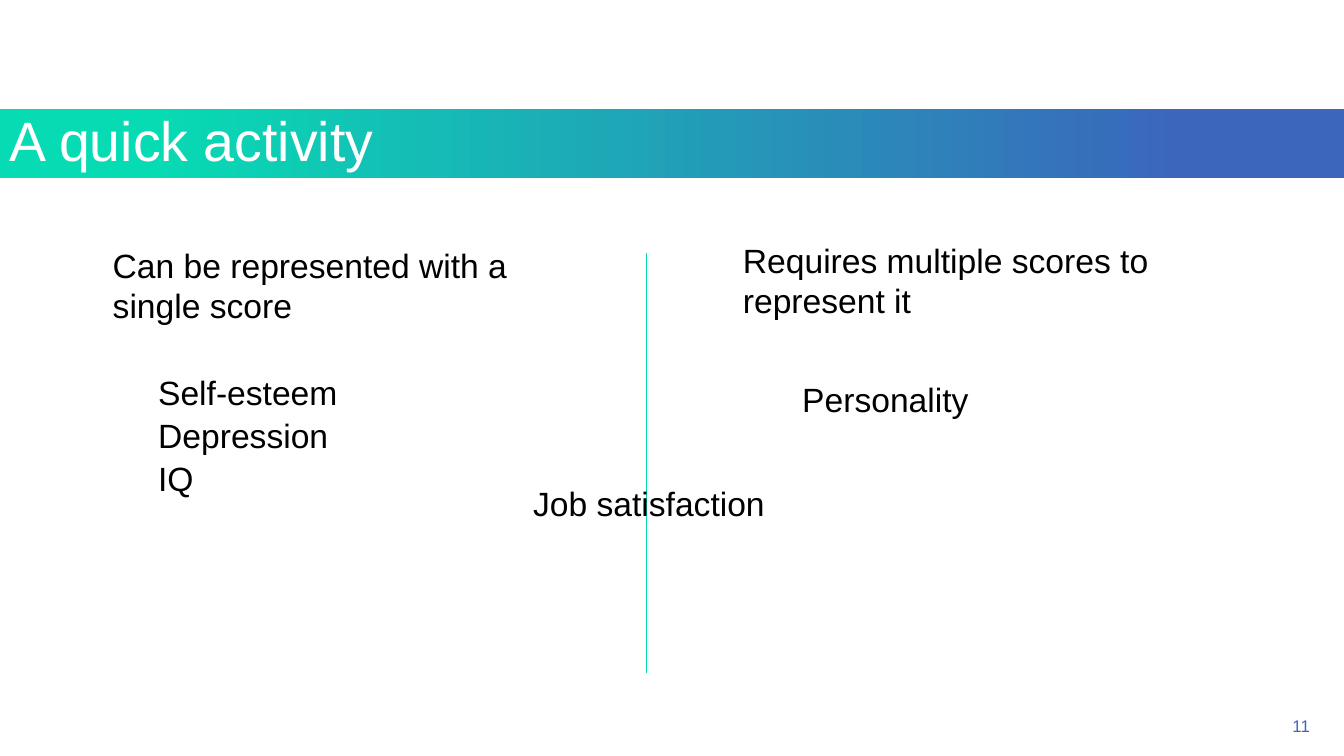
from lxml import etree
from pptx import Presentation
from pptx.dml.color import RGBColor
from pptx.enum.shapes import MSO_CONNECTOR, MSO_SHAPE
from pptx.enum.text import MSO_ANCHOR, PP_ALIGN
from pptx.oxml.ns import qn
from pptx.util import Inches, Pt

RECT = MSO_SHAPE.RECTANGLE
LINE = MSO_CONNECTOR.STRAIGHT
TOP, MID, LOW = MSO_ANCHOR.TOP, MSO_ANCHOR.MIDDLE, MSO_ANCHOR.BOTTOM
LEFT, RIGHT = PP_ALIGN.LEFT, PP_ALIGN.RIGHT

WIDE, HIGH = Inches(13.33), Inches(7.5)
BLUE, MINT, TEAL = "3B66BC", "07DBB3", "00DAB1"
BLACK, WHITE = "000000", "FFFFFF"


def color(code):
    return RGBColor.from_string(code)


def share(x, y):
    """Turn percentages of the slide's width and height into lengths."""
    return int(WIDE * x / 100), int(HIGH * y / 100)


def write(shape, lines, size=24, ink=BLACK, align=LEFT, anchor=TOP,
          indent=0, pitch=1.0, gap=0):
    frame = shape.text_frame
    frame.word_wrap = True
    frame.vertical_anchor = anchor
    for i, line in enumerate(lines):
        par = frame.paragraphs[0] if i == 0 else frame.add_paragraph()
        par.alignment = align
        par.line_spacing = pitch
        if i:
            par.space_before = Pt(gap)
        if indent:
            par.level = 1
            props = par._p.get_or_add_pPr()
            props.set("marL", str(Inches(indent)))
            props.set("indent", "0")
        run = par.add_run()
        run.text = line
        run.font.name = "Arial"
        run.font.size = Pt(size)
        run.font.color.rgb = color(ink)


def label(slide, x, y, w, h, *lines, **style):
    box = slide.shapes.add_textbox(*share(x, y), *share(w, h))
    write(box, lines, **style)


def banner(slide, y, h, title):
    bar = slide.shapes.add_shape(RECT, *share(0, y), *share(100, h))
    bar.shadow.inherit = False
    bar.line.fill.background()
    bar.fill.gradient()
    bar.fill.gradient_angle = 180
    # Solid ends with a blend between them
    stops = bar._element.spPr.find(qn("a:gradFill")).find(qn("a:gsLst"))
    for stop in list(stops):
        stops.remove(stop)
    for pos, code in ((0, BLUE), (12, BLUE), (89, MINT), (100, MINT)):
        stop = etree.SubElement(stops, qn("a:gs"), pos=str(pos * 1000))
        etree.SubElement(stop, qn("a:srgbClr"), val=code)
    write(bar, [title], size=39.6, ink=WHITE, anchor=MID, pitch=0.9)


def divide(slide, x, top, end):
    rule = slide.shapes.add_connector(LINE, *share(x, top), *share(x, end))
    rule.line.color.rgb = color(TEAL)
    rule.line.width = Pt(0.75)
    etree.SubElement(rule._element.spPr, qn("a:effectLst"))


def main():
    deck = Presentation()
    deck.slide_width, deck.slide_height = WIDE, HIGH
    slide = deck.slides.add_slide(deck.slide_layouts[6])
    item = {"indent": 0.5, "pitch": 0.9, "gap": 5}

    # Title band
    banner(slide, 14.4, 9.2, "A quick activity")

    # Left column items and slide number
    label(slide, 7.28, 49.1, 28.5, 34.4,
          "Self-esteem", "Depression", "IQ", **item)
    label(slide, 75.7, 94.67, 22.5, 3.33, "11",
          size=12, ink=BLUE, align=RIGHT, anchor=LOW)

    # Column headings
    label(slide, 7.65, 31.73, 37.8, 12.13,
          "Can be represented with a single score")
    label(slide, 54.54, 31.07, 37.8, 12.13,
          "Requires multiple scores to represent it")

    # Right column item
    label(slide, 55.2, 50.1, 23.2, 13.3, "Personality", **item)

    # Divider with the item that straddles it
    divide(slide, 48.09, 33.47, 89.07)
    label(slide, 35.18, 63.87, 28, 6.13, "Job satisfaction", **item)

    deck.save("out.pptx")


if __name__ == "__main__":
    main()
